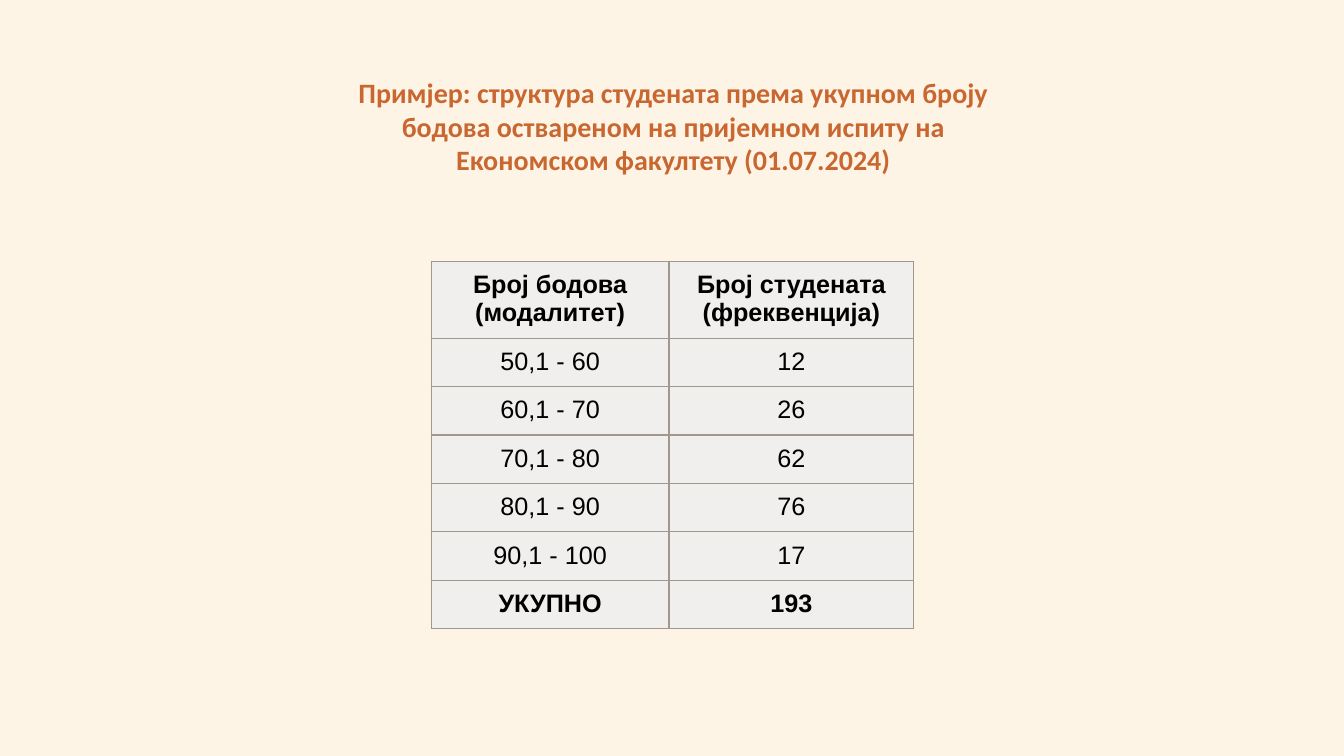
from lxml.etree import SubElement
from pptx import Presentation
from pptx.dml.color import RGBColor
from pptx.enum.text import MSO_ANCHOR, MSO_AUTO_SIZE, PP_ALIGN
from pptx.oxml.ns import qn
from pptx.util import Cm, Pt

COLORS = {
    "background": "FEF4E5",
    "title": "C96731",
    "text": "000000",
    "cell": "F0EFEE",
    "border": "A0988C",
}
FREQUENCIES = [
    ("Број бодова (модалитет)", "Број студената (фреквeнција)"),
    ("50,1 - 60", "12"),
    ("60,1 - 70", "26"),
    ("70,1 - 80", "62"),
    ("80,1 - 90", "76"),
    ("90,1 - 100", "17"),
    ("УКУПНО", "193"),
]


class SlideBuilder:
    def __init__(self, deck):
        self.page = deck.slides.add_slide(deck.slide_layouts[5])
        fill = self.page.background.fill
        fill.solid()
        fill.fore_color.rgb = self.color("background")

    def color(self, name):
        return RGBColor.from_string(COLORS[name])

    def style_paragraph(self, para, font_name, size, color, bold):
        para.alignment = PP_ALIGN.CENTER
        para.font.name = font_name
        para.font.size = Pt(size)
        para.font.bold = bold
        para.font.color.rgb = self.color(color)

    def title(self, text, left, top, width, height):
        box = self.page.shapes.title
        box.left, box.top = Cm(left), Cm(top)
        box.width, box.height = Cm(width), Cm(height)
        frame = box.text_frame
        frame.text = text
        frame.word_wrap = True
        frame.auto_size = MSO_AUTO_SIZE.NONE
        frame.vertical_anchor = MSO_ANCHOR.TOP
        self.style_paragraph(frame.paragraphs[0], "Calibri", 20, "title", True)

    def table(self, rows, left, top, column_widths, row_heights):
        frame = self.page.shapes.add_table(
            len(rows), len(column_widths), Cm(left), Cm(top),
            Cm(sum(column_widths)), Cm(sum(row_heights)))
        table = frame.table
        table.first_row = table.horz_banding = False
        for column, width in zip(table.columns, column_widths):
            column.width = Cm(width)
        for row, height in zip(table.rows, row_heights):
            row.height = Cm(height)
        for row_index, texts in enumerate(rows):
            bold = row_index in (0, len(rows) - 1)
            for column_index, text in enumerate(texts):
                self.cell(table.cell(row_index, column_index), text, bold)

    def cell(self, cell, text, bold):
        cell.text = text
        cell.margin_left = cell.margin_right = Cm(0.24)
        cell.margin_top = cell.margin_bottom = Cm(0.24)
        self.style_paragraph(cell.text_frame.paragraphs[0], "Arial", 18, "text", bold)
        self.cell_borders(cell)
        cell.fill.solid()
        cell.fill.fore_color.rgb = self.color("cell")

    def cell_borders(self, cell):
        properties = cell._tc.get_or_add_tcPr()
        for side in ("lnL", "lnR", "lnT", "lnB"):
            line = SubElement(properties, qn(f"a:{side}"), w=str(Pt(1)))
            fill = SubElement(line, qn("a:solidFill"))
            SubElement(fill, qn("a:srgbClr"), val=COLORS["border"])


def main():
    deck = Presentation()
    deck.slide_width, deck.slide_height = Cm(33.87), Cm(19.05)
    slide = SlideBuilder(deck)
    slide.title(
        "Примјер: структура студената према укупном броју бодова "
        "оствареном на пријемном испиту на Економском факултету (01.07.2024)",
        8.46, 1.78, 17.02, 1.75)
    slide.table(FREQUENCIES, 10.87, 6.58, [5.99, 6.17],
                [1.94] + [1.22] * (len(FREQUENCIES) - 1))
    deck.save("out.pptx")


if __name__ == "__main__":
    main()
